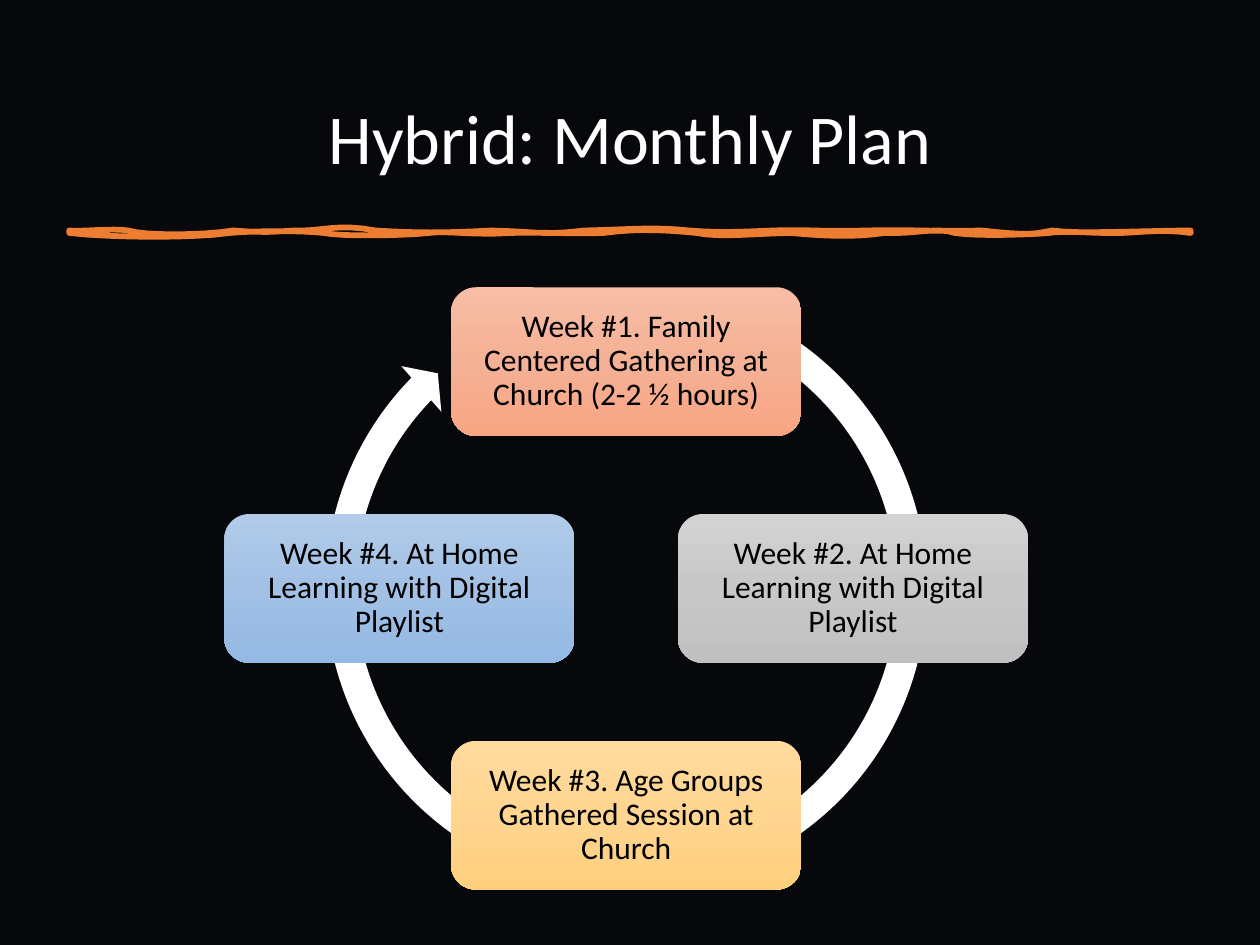
from copy import deepcopy
from math import cos, radians, sin

from pptx import Presentation
from pptx.dml.color import RGBColor
from pptx.enum.shapes import MSO_SHAPE as Shape
from pptx.enum.text import MSO_ANCHOR as Anchor, PP_ALIGN as Align
from pptx.util import Inches, Pt

BACKGROUND = RGBColor(0x07, 0x08, 0x0B)
WHITE = RGBColor(0xFF, 0xFF, 0xFF)
BLACK = RGBColor(0x00, 0x00, 0x00)
ORANGE = RGBColor(0xED, 0x7D, 0x31)
SALMON = [RGBColor(0xF7, 0xBD, 0xA5), RGBColor(0xF5, 0xB1, 0x96), RGBColor(0xF8, 0xA5, 0x82)]
GRAY = [RGBColor(0xD2, 0xD2, 0xD2), RGBColor(0xC8, 0xC8, 0xC8), RGBColor(0xC0, 0xC0, 0xC0)]
GOLD = [RGBColor(0xFF, 0xDB, 0x9E), RGBColor(0xFF, 0xD5, 0x90), RGBColor(0xFF, 0xD0, 0x7C)]
BLUE = [RGBColor(0xB1, 0xCB, 0xE9), RGBColor(0xA3, 0xC1, 0xE5), RGBColor(0x93, 0xB9, 0xE4)]

WEEKS = [
    ("Week #1. Family Centered Gathering at Church (2-2 ½ hours)", SALMON),
    ("Week #2. At Home Learning with Digital Playlist", GRAY),
    ("Week #3. Age Groups Gathered Session at Church", GOLD),
    ("Week #4. At Home Learning with Digital Playlist", BLUE),
]

BRUSH_CURVES = [
    (0.09, 0.01, 0.34, -0.02, 0.47, 0), (0.59, 0.04, 1.05, 0.04, 1.3, 0),
    (1.58, 0.02, 1.61, 0.01, 1.78, 0), (1.99, 0.01, 2.13, -0.06, 2.43, 0),
    (2.76, 0.02, 2.97, 0.02, 3.35, 0), (3.76, 0.01, 3.73, 0.04, 4.09, 0),
    (4.48, -0.01, 4.65, -0.03, 4.92, 0), (5.18, 0.02, 5.33, 0.01, 5.58, 0),
    (5.86, -0.01, 5.96, 0.01, 6.32, 0), (6.66, -0.01, 6.86, 0.01, 7.24, 0),
    (7.62, 0.04, 7.64, 0.03, 7.8, 0), (8, 0.03, 8.58, 0, 8.9, 0),
    (8.9, 0.01, 8.9, 0.02, 8.9, 0.02), (8.65, -0.02, 8.4, 0.03, 8.25, 0.02),
    (8.08, 0.02, 7.9, 0, 7.77, 0.02), (7.67, 0.03, 7.22, 0.05, 7.03, 0.02),
    (6.88, -0.03, 6.72, 0.03, 6.47, 0.02), (6.21, 0.06, 5.95, 0.04, 5.73, 0.02),
    (5.52, 0.02, 5.15, 0.06, 4.98, 0.02), (4.77, 0, 4.53, -0.02, 4.24, 0.02),
    (3.95, 0.03, 3.8, 0.01, 3.5, 0.02), (3.19, 0.04, 3.01, 0, 2.85, 0.02),
    (2.68, 0.04, 2.16, 0.05, 2.02, 0.02), (1.83, 0, 1.51, 0, 1.27, 0.02),
    (1.01, 0.06, 0.36, 0.06, 0, 0.02), (0, 0.02, 0, 0.01, 0, 0),
]


def write_text(shape, text, size, color):
    text_frame = shape.text_frame
    text_frame.text = text
    text_frame.word_wrap = True
    text_frame.vertical_anchor = Anchor.MIDDLE
    paragraph = text_frame.paragraphs[0]
    paragraph.alignment = Align.CENTER
    paragraph.line_spacing = 0.9
    font = paragraph.runs[0].font
    font.name = "Calibri"
    font.size = Pt(size)
    font.color.rgb = color


def add_title(slide, left, top, width, height):
    title = slide.shapes.add_textbox(left, top, width, height)
    write_text(title, "Hybrid: Monthly Plan", 40, WHITE)


def sample_curves(curves, steps=8):
    start = (0, 0)
    for curve in curves:
        controls = [start, curve[:2], curve[2:4], curve[4:]]
        for step in range(1, steps + 1):
            t = step / steps
            weights = ((1 - t) ** 3, 3 * t * (1 - t) ** 2, 3 * t * t * (1 - t), t ** 3)
            yield tuple(
                sum(weight * control[axis] for weight, control in zip(weights, controls))
                for axis in (0, 1)
            )
        start = curve[4:]


def add_brush_rule(slide, left, top):
    builder = slide.shapes.build_freeform(left, top)
    points = [(left + Inches(x), top + Inches(y)) for x, y in sample_curves(BRUSH_CURVES)]
    builder.add_line_segments(points, close=True)
    rule = builder.convert_to_shape()
    rule.shadow.inherit = False
    rule.fill.background()
    rule.line.color.rgb = ORANGE
    rule.line.width = Pt(3.25)


def fill_gradient(shape, colors):
    shape.fill.gradient()
    stop_list = shape.fill.gradient_stops[0]._gs.getparent()
    stop_list.insert(1, deepcopy(stop_list[0]))
    for stop, position, color in zip(shape.fill.gradient_stops, (0, 0.5, 1), colors):
        stop.position = position
        stop.color.rgb = color
    shape.fill.gradient_angle = 270


def add_week(slide, left, top, width, height, text, colors):
    card = slide.shapes.add_shape(Shape.ROUNDED_RECTANGLE, left, top, width, height)
    card.shadow.inherit = False
    card.line.fill.background()
    fill_gradient(card, colors)
    text_frame = card.text_frame
    text_frame.margin_left = text_frame.margin_right = Inches(0.07)
    text_frame.margin_top = text_frame.margin_bottom = Inches(0.07)
    write_text(card, text, 18, BLACK)


def add_cycle(slide, left, top, size):
    ring = slide.shapes.add_shape(Shape.CIRCULAR_ARROW, left, top, size, size)
    for index, value in enumerate((0.047, 2.729, 134.54, 176.216, 0.048)):
        ring.adjustments[index] = value
    ring.shadow.inherit = False
    ring.fill.solid()
    ring.fill.fore_color.rgb = WHITE
    ring.line.fill.background()

    width, height, radius = Inches(2.78), Inches(1.18), Inches(1.8)
    for index, (text, colors) in enumerate(WEEKS):
        angle = radians(360 / len(WEEKS) * index - 90)
        card_left = left + (size - width) / 2 + radius * cos(angle)
        card_top = top + (size - height) / 2 + radius * sin(angle)
        add_week(slide, round(card_left), round(card_top), width, height, text, colors)


def main():
    presentation = Presentation()
    presentation.slide_width = Inches(10)
    presentation.slide_height = Inches(7.5)
    slide = presentation.slides.add_slide(presentation.slide_layouts[6])
    slide.background.fill.solid()
    slide.background.fill.fore_color.rgb = BACKGROUND
    add_title(slide, Inches(0.69), Inches(0.4), Inches(8.62), Inches(1.45))
    add_brush_rule(slide, Inches(0.55), Inches(1.83))
    add_cycle(slide, Inches(2.46), Inches(2.16), Inches(5.02))
    presentation.save("out.pptx")


if __name__ == "__main__":
    main()
